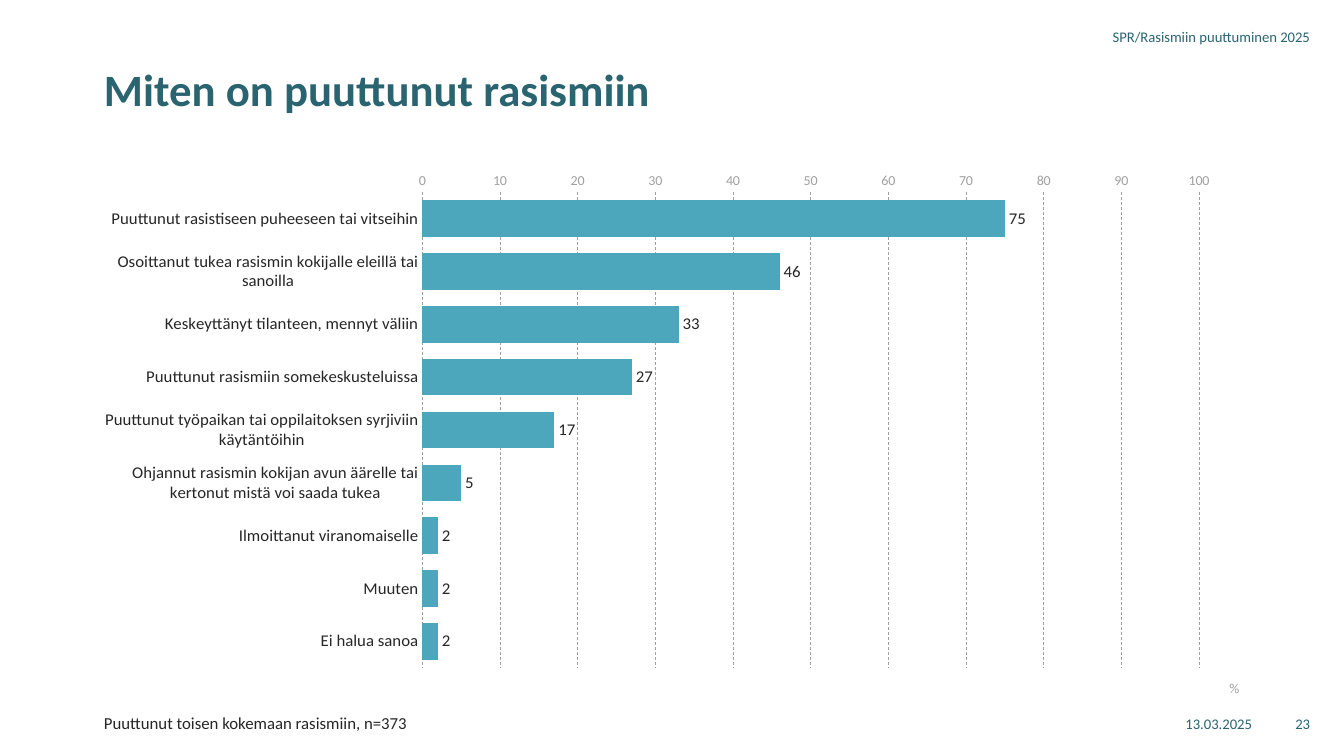
from lxml.etree import SubElement
from pptx import Presentation
from pptx.chart.data import CategoryChartData
from pptx.dml.color import RGBColor
from pptx.enum.chart import XL_AXIS_CROSSES, XL_CHART_TYPE, XL_LABEL_POSITION, XL_TICK_MARK
from pptx.enum.dml import MSO_LINE
from pptx.enum.text import MSO_ANCHOR, PP_ALIGN
from pptx.oxml.ns import qn
from pptx.util import Emu, Pt

SCALE = 914400 / 100.8
TEAL, BAR, INK, GREY = "2A6471", "4DA7BC", "262626", "A0A0A0"
ANSWERS = {
    "Puuttunut rasistiseen puheeseen tai vitseihin": 75,
    "Osoittanut tukea rasismin kokijalle eleillä tai sanoilla": 46,
    "Keskeyttänyt tilanteen, mennyt väliin": 33,
    "Puuttunut rasismiin somekeskusteluissa": 27,
    "Puuttunut työpaikan tai oppilaitoksen syrjiviin käytäntöihin": 17,
    "Ohjannut rasismin kokijan avun äärelle tai kertonut mistä voi saada tukea": 5,
    "Ilmoittanut viranomaiselle": 2,
    "Muuten": 2,
    "Ei halua sanoa": 2,
}


def px(count):
    """Turn pixels into EMU."""
    return Emu(round(count * SCALE))


def paint(hue):
    """Turn a hex string into a colour."""
    return RGBColor.from_string(hue)


def apply(item, values):
    """Set each attribute named in a dict."""
    for name, value in values.items():
        setattr(item, name, value)


def style(font, size, hue, bold=False):
    """Give a font its face, size, weight and colour."""
    apply(font, {"name": "Calibri", "size": Pt(size), "bold": bold})
    font.color.rgb = paint(hue)


def write(slide, text, box, size, hue, bold=False, space=1.0,
          align=PP_ALIGN.LEFT, anchor=MSO_ANCHOR.TOP):
    """Add a wrapped one-paragraph text box."""
    frame = slide.shapes.add_textbox(*map(px, box)).text_frame
    apply(frame, {"word_wrap": True, "vertical_anchor": anchor})
    line = frame.paragraphs[0]
    apply(line, {"alignment": align, "line_spacing": space})
    run = line.add_run()
    run.text = text
    style(run.font, size, hue, bold)


def margin(slide, text, box):
    """Add a small right-aligned text at the slide edge."""
    write(slide, text, box, 10.5, TEAL, align=PP_ALIGN.RIGHT, anchor=MSO_ANCHOR.MIDDLE)


def place(node, index, **parts):
    """Give a chart element a manual layout."""
    for old in node.findall(qn("c:layout")):
        node.remove(old)
    layout = SubElement(node, qn("c:layout"))
    node.insert(index, layout)
    manual = SubElement(layout, qn("c:manualLayout"))
    for name, value in parts.items():
        SubElement(manual, qn("c:" + name)).set("val", str(value))


def scale(axis):
    """Format the percent axis with its grid and unit."""
    apply(axis, {"minimum_scale": 0, "maximum_scale": 100, "major_unit": 10,
                 "major_tick_mark": XL_TICK_MARK.NONE, "has_major_gridlines": True})
    axis.format.line.fill.background()
    style(axis.tick_labels.font, 10, GREY)
    grid = axis.major_gridlines.format.line
    apply(grid, {"width": Pt(0.5), "dash_style": MSO_LINE.DASH})
    grid.color.rgb = paint(GREY)
    title = axis.axis_title
    run = title.text_frame.paragraphs[0].add_run()
    run.text = "%"
    style(run.font, 10, GREY)
    place(title._element, 1, xMode="edge", yMode="edge", x=0.98, y=0.95)


def bars(slide, box):
    """Add the bar chart of answers."""
    data = CategoryChartData(number_format="General")
    data.categories = list(ANSWERS)
    data.add_series("Series 1", list(ANSWERS.values()))
    chart = slide.shapes.add_chart(XL_CHART_TYPE.BAR_CLUSTERED, *map(px, box), data).chart
    apply(chart, {"has_legend": False, "has_title": False})
    style(chart.font, 12, INK)
    names = chart.category_axis
    apply(names, {"reverse_order": True, "major_tick_mark": XL_TICK_MARK.NONE,
                  "crosses": XL_AXIS_CROSSES.MAXIMUM, "has_major_gridlines": False})
    names.format.line.fill.background()
    style(names.tick_labels.font, 12, INK)
    scale(chart.value_axis)
    plot = chart.plots[0]
    apply(plot, {"gap_width": 45, "vary_by_categories": False, "has_data_labels": True})
    fill = plot.series[0].format.fill
    fill.solid()
    fill.fore_color.rgb = paint(BAR)
    labels = plot.data_labels
    apply(labels, {"show_value": True, "position": XL_LABEL_POSITION.OUTSIDE_END,
                   "number_format": "#,##0", "number_format_is_linked": False})
    style(labels.font, 12, INK)
    area = chart._chartSpace.find(".//" + qn("c:plotArea"))
    place(area, 0, layoutTarget="inner", xMode="edge", yMode="edge",
          x=0.284, y=0.012, w=0.672, h=0.92)


def main():
    """Build the slide and save it."""
    deck = Presentation()
    apply(deck, {"slide_width": px(1344), "slide_height": px(756)})
    slide = deck.slides.add_slide(deck.slide_layouts[6])
    margin(slide, "13.03.2025", (960, 704, 302, 40))
    margin(slide, "SPR/Rasismiin puuttuminen 2025", (867, 17, 453, 40))
    margin(slide, "23", (1276, 704, 44, 40))
    write(slide, "Miten on puuttunut rasismiin", (94, 62, 1156, 106), 32, TEAL, True, Pt(35))
    write(slide, "Puuttunut toisen kokemaan rasismiin, n=373", (94, 710, 925, 28),
          12, INK, space=0.9)
    bars(slide, (94, 173, 1156, 530))
    deck.save("out.pptx")


if __name__ == "__main__":
    main()
